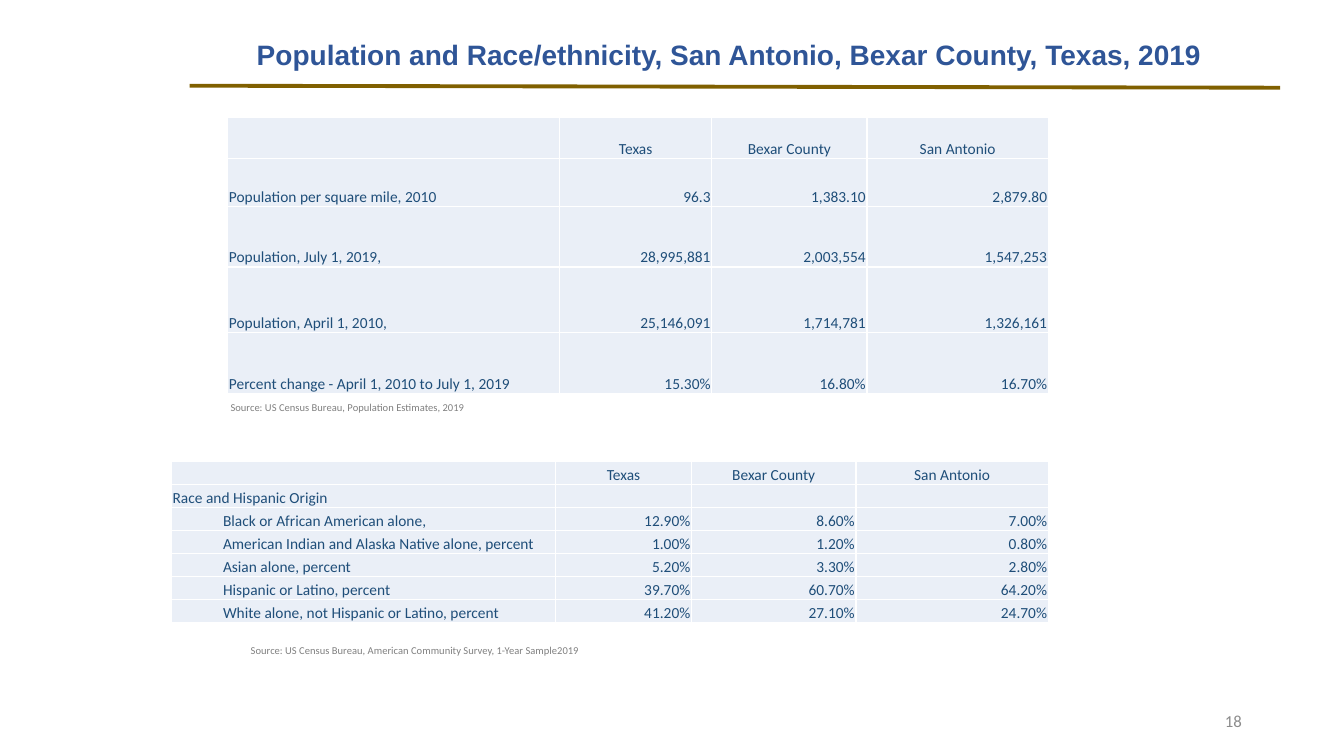
"""Build the slide on population and race/ethnicity in San Antonio, Bexar County and Texas."""
from dataclasses import dataclass

from lxml.etree import SubElement
from pptx import Presentation
from pptx.dml.color import RGBColor
from pptx.enum.shapes import MSO_CONNECTOR as Connector
from pptx.enum.text import MSO_ANCHOR as Anchor, PP_ALIGN as Align
from pptx.oxml.ns import qn
from pptx.util import Cm, Pt


@dataclass(frozen=True)
class Theme:
    heading_font: str = "Arial"
    body_font: str = "Calibri"
    title: str = "2F5597"
    rule: str = "806000"
    cell: str = "EAEFF7"
    border: str = "FFFFFF"
    table_text: str = "1F4E79"
    source: str = "808080"
    number: str = "8C8C8C"
    title_size: float = 20
    table_size: float = 11
    source_size: float = 7.5
    number_size: float = 12


theme = Theme()


def style_text(paragraph, size, color, align=Align.LEFT, font=theme.body_font, bold=False):
    paragraph.alignment = align
    for run in paragraph.runs:
        run.font.name = font
        run.font.size = Pt(size)
        run.font.bold = bold
        run.font.color.rgb = RGBColor.from_string(color)


def add_text(slide, box, text, anchor, *style):
    shape = slide.shapes.add_textbox(*(Cm(length) for length in box))
    frame = shape.text_frame
    frame.word_wrap = True
    frame.vertical_anchor = anchor
    frame.text = text
    style_text(frame.paragraphs[0], *style)
    return frame.paragraphs[0]


presentation = Presentation()
presentation.slide_width, presentation.slide_height = Cm(33.87), Cm(19.05)
slide = presentation.slides.add_slide(presentation.slide_layouts[6])

rule = slide.shapes.add_connector(Connector.STRAIGHT, Cm(4.78), Cm(2.16), Cm(32.26), Cm(2.21))
rule.line.color.rgb = RGBColor.from_string(theme.rule)
rule.line.width = Pt(2.75)
SubElement(rule._element.spPr, qn("a:effectLst"))

title = add_text(slide, (4.7, 0.64, 27.36, 1.55),
                 "Population and Race/ethnicity, San Antonio, Bexar County, Texas, 2019",
                 Anchor.MIDDLE, theme.title_size, theme.title, Align.CENTER,
                 theme.heading_font, True)
title.line_spacing = 0.9

header = ("", "Texas", "Bexar County", "San Antonio")
population = (
    header,
    ("Population per square mile, 2010", "96.3", "1,383.10", "2,879.80"),
    ("Population, July 1, 2019,", "28,995,881", "2,003,554", "1,547,253"),
    ("Population, April 1, 2010,", "25,146,091", "1,714,781", "1,326,161"),
    ("Percent change - April 1, 2010 to July 1, 2019", "15.30%", "16.80%", "16.70%"),
)
ethnicity = (
    header,
    ("Race and Hispanic Origin", "", "", ""),
    ("Black or African American alone,", "12.90%", "8.60%", "7.00%"),
    ("American Indian and Alaska Native alone, percent", "1.00%", "1.20%", "0.80%"),
    ("Asian alone, percent", "5.20%", "3.30%", "2.80%"),
    ("Hispanic or Latino, percent", "39.70%", "60.70%", "64.20%"),
    ("White alone, not Hispanic or Latino, percent", "41.20%", "27.10%", "24.70%"),
)
tables = (
    (population, 5.74, 2.95, (8.36, 3.84, 3.91, 4.57), (1.04, 1.22, 1.52, 1.65, 1.55), None),
    (ethnicity, 4.32, 11.63, (9.68, 3.43, 4.14, 4.85), (0.58,) * len(ethnicity), 2),
)
for rows, left, top, widths, heights, first_indented in tables:
    table = slide.shapes.add_table(len(rows), len(widths), Cm(left), Cm(top),
                                   Cm(sum(widths)), Cm(sum(heights))).table
    table.first_row = table.horz_banding = False
    for column, width in zip(table.columns, widths):
        column.width = Cm(width)
    for row, height in zip(table.rows, heights):
        row.height = Cm(height)
    for row_index, values in enumerate(rows):
        for column_index, value in enumerate(values):
            cell = table.cell(row_index, column_index)
            cell.margin_left = cell.margin_right = cell.margin_top = Cm(0.03)
            cell.margin_bottom = 0
            cell.vertical_anchor = Anchor.BOTTOM
            properties = cell._tc.get_or_add_tcPr()
            for side in ("a:lnL", "a:lnR", "a:lnT", "a:lnB"):
                line = SubElement(properties, qn(side), w=str(Pt(1)))
                SubElement(SubElement(line, qn("a:solidFill")), qn("a:srgbClr"), val=theme.border)
            cell.fill.solid()
            cell.fill.fore_color.rgb = RGBColor.from_string(theme.cell)
            paragraph = cell.text_frame.paragraphs[0]
            if value:
                paragraph.text = value
            else:
                SubElement(paragraph._p, qn("a:endParaRPr"), sz=str(theme.table_size * 100))
            if column_index == 0:
                align = Align.LEFT
            else:
                align = Align.RIGHT if row_index else Align.CENTER
            style_text(paragraph, theme.table_size, theme.table_text, align)
            if first_indented and row_index >= first_indented and column_index == 0:
                paragraph.level = 1
                paragraph._p.get_or_add_pPr().set("marL", str(Cm(1.27)))

sources = (
    (5.56, 9.98, "Source: US Census Bureau, Population Estimates, 2019"),
    (6.07, 16.1, "Source: US Census Bureau, American Community Survey, 1-Year Sample2019"),
)
for left, top, text in sources:
    add_text(slide, (left, top, 13.34, 0.58), text, Anchor.TOP, theme.source_size, theme.source)

add_text(slide, (23.93, 17.65, 7.62, 1.02), "18", Anchor.MIDDLE,
         theme.number_size, theme.number, Align.RIGHT)

presentation.save("out.pptx")
